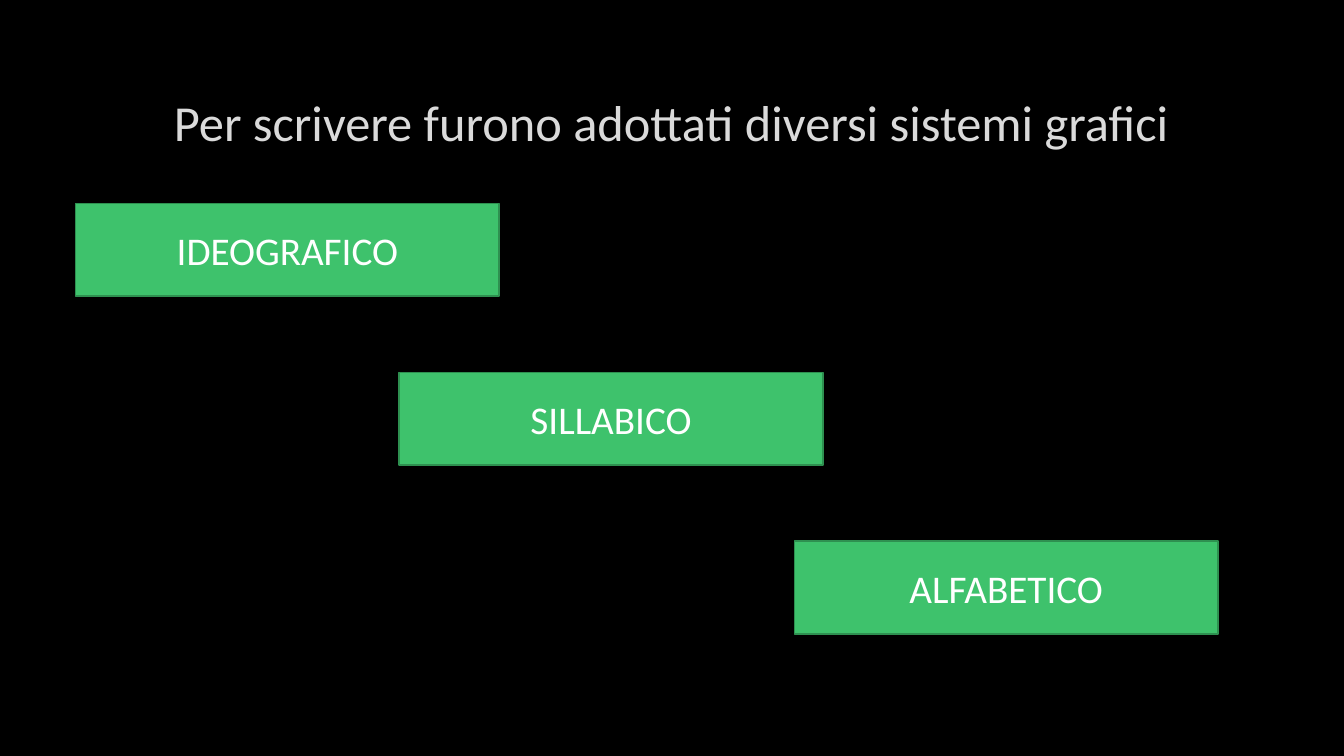
import pptx
import pptx.dml.color
import pptx.enum.shapes
import pptx.enum.text
import pptx.oxml
import pptx.oxml.ns
import pptx.util

Inches, Pt = pptx.util.Inches, pptx.util.Pt
RGBColor = pptx.dml.color.RGBColor

TITLE = "Per scrivere furono adottati diversi sistemi grafici"
SYSTEMS = [("IDEOGRAFICO", 0.75), ("SILLABICO", 3.96), ("ALFABETICO", 7.88)]

BLACK = RGBColor(0x00, 0x00, 0x00)
LIGHT_GREY = RGBColor(0xDA, 0xDA, 0xDA)
GREEN = RGBColor(0x3E, 0xC2, 0x6C)
DARK_GREEN = RGBColor(0x2E, 0x90, 0x50)
WHITE = RGBColor(0xFF, 0xFF, 0xFF)

FIRST_TOP, STEP = 2.02, 1.675
BOX_WIDTH, BOX_HEIGHT = 4.2, 0.92
OUTLINE = (
    f'<a:ln {pptx.oxml.ns.nsdecls("a")} w="9525"><a:solidFill><a:srgbClr val="404040">'
    '<a:alpha val="10000"/></a:srgbClr></a:solidFill><a:prstDash val="solid"/></a:ln>'
)


def write_text(shape, text, color, **formats):
    """Put one centred line of text in a shape and return its run."""
    tf = shape.text_frame
    tf.word_wrap = True
    tf.auto_size = pptx.enum.text.MSO_AUTO_SIZE.NONE
    tf.vertical_anchor = pptx.enum.text.MSO_ANCHOR.MIDDLE
    p = tf.paragraphs[0]
    p.alignment = pptx.enum.text.PP_ALIGN.CENTER
    r = p.add_run()
    r.text = text
    for name, value in formats.items():
        setattr(r.font, name, value)
    r.font.color.rgb = color
    return r


def main():
    """Build the slide on writing systems."""
    prs = pptx.Presentation()
    prs.slide_width, prs.slide_height = Inches(13.33), Inches(7.5)
    s = prs.slides.add_slide(prs.slide_layouts[5])
    s.background.fill.solid()
    s.background.fill.fore_color.rgb = BLACK

    title = s.shapes.title
    place = {"left": 1, "top": 0.67, "width": 11.32, "height": 1.06}
    for name, value in place.items():
        setattr(title, name, Inches(value))
    r = write_text(title, TITLE, LIGHT_GREY, size=Pt(36), name="Calibri")
    r.font._element.insert(0, pptx.oxml.parse_xml(OUTLINE))

    for i, (label, left) in enumerate(SYSTEMS):
        sp = s.shapes.add_shape(
            pptx.enum.shapes.MSO_SHAPE.RECTANGLE,
            Inches(left), Inches(FIRST_TOP + i * STEP),
            Inches(BOX_WIDTH), Inches(BOX_HEIGHT),
        )
        sp.shadow.inherit = False
        sp.fill.solid()
        sp.fill.fore_color.rgb = GREEN
        sp.line.color.rgb = DARK_GREEN
        sp.line.width = Pt(1.25)
        write_text(sp, label, WHITE, size=Pt(28), name="Calibri")

    prs.save("out.pptx")


if __name__ == "__main__":
    main()
